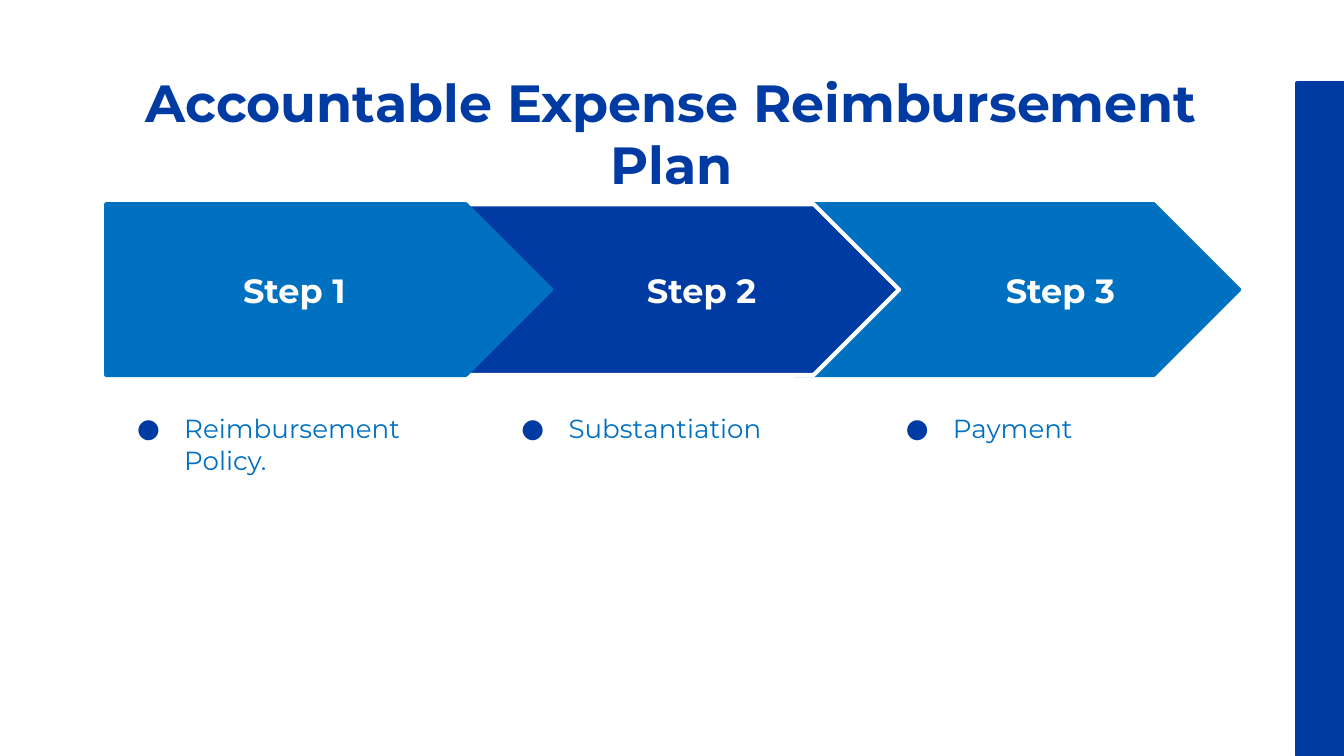
from dataclasses import dataclass
from lxml.etree import SubElement
from pptx import Presentation
from pptx.dml.color import RGBColor
from pptx.enum.shapes import MSO_SHAPE
from pptx.enum.text import MSO_ANCHOR, MSO_AUTO_SIZE, PP_ALIGN
from pptx.oxml.ns import qn
from pptx.util import Pt

NAVY, BLUE, WHITE = "003BA3", "0070C0", "FFFFFF"
LIST_LEFT, LIST_STEP = 55.44, 205.92


@dataclass
class Step:
    name: str
    note: str
    left: float   # arrow
    label: float  # left of its label
    fill: str
    line: str


STEPS = [
    Step("Step 1", "Reimbursement Policy.", 56.88, 89.28, BLUE, BLUE),
    Step("Step 2", "Substantiation", 243.36, 307.44, NAVY, WHITE),
    Step("Step 3", "Payment", 425.52, 499.68, BLUE, BLUE),
]


def color(code: str) -> RGBColor:
    return RGBColor.from_string(code)


def place(shape, x: float, y: float, w: float, h: float) -> None:
    shape.left, shape.top, shape.width, shape.height = Pt(x), Pt(y), Pt(w), Pt(h)


def block(slide, kind, box: tuple, fill: str, line: str, width: float) -> None:
    shape = slide.shapes.add_shape(kind, *map(Pt, box))
    shape.shadow.inherit = False
    shape.fill.solid()
    shape.fill.fore_color.rgb = color(fill)
    shape.line.color.rgb = color(line)
    shape.line.width = Pt(width)


def write(shape, text: str, size: float, code: str, bold: bool, align):
    frame = shape.text_frame
    frame.word_wrap = True
    frame.auto_size = MSO_AUTO_SIZE.NONE
    frame.vertical_anchor = MSO_ANCHOR.TOP
    frame.margin_left = frame.margin_right = Pt(7.2)
    frame.margin_top = frame.margin_bottom = Pt(7.2)
    para = frame.paragraphs[0]
    para.alignment = align
    para.line_spacing = 1.0
    para.space_before = Pt(0)
    run = para.add_run()
    run.text = text
    font = run.font
    font.name, font.size, font.bold = "Montserrat", Pt(size), bold
    font.color.rgb = color(code)
    return para


def bullet(para, code: str) -> None:
    props = para._p.get_or_add_pPr()
    props.set("marL", str(Pt(36)))
    props.set("indent", str(Pt(-25.2)))
    tint = SubElement(props, qn("a:buClr"))
    SubElement(tint, qn("a:srgbClr"), val=code)
    SubElement(props, qn("a:buFont"), typeface="Montserrat")
    SubElement(props, qn("a:buChar"), char="●")


def main() -> None:
    deck = Presentation()
    deck.slide_width, deck.slide_height = Pt(720), Pt(405)
    # The comparison layout has a title and four bodies
    slide = deck.slides.add_slide(deck.slide_layouts[4])

    # Title
    title = slide.shapes.title
    place(title, 56.16, 30.24, 606.96, 66.96)
    write(title, "Accountable Expense Reimbursement Plan", 28, NAVY, True, PP_ALIGN.CENTER)

    # Lists, one under each arrow
    bodies = [p for p in slide.placeholders if p.placeholder_format.idx in (1, 2, 3, 4)]
    for i, (body, step) in enumerate(zip(bodies, STEPS)):
        place(body, LIST_LEFT + i * LIST_STEP, 213.84, 191.52, 131.04)
        bullet(write(body, step.note, 14, BLUE, False, PP_ALIGN.LEFT), NAVY)

    # Drop the spare body and any footers
    used = [title.shape_id] + [b.shape_id for b in bodies[:len(STEPS)]]
    for spare in list(slide.placeholders):
        if spare.shape_id not in used:
            spare.element.getparent().remove(spare.element)

    # Arrows, the first one on top
    for step in reversed(STEPS):
        block(slide, MSO_SHAPE.PENTAGON, (step.left, 109.44, 238.32, 91.44),
              step.fill, step.line, 2.25)

    # Arrow labels
    for step in STEPS:
        label = slide.shapes.add_textbox(Pt(step.label), Pt(137.52), Pt(136.8), Pt(36))
        write(label, step.name, 18, WHITE, True, PP_ALIGN.CENTER)

    # Side bar
    block(slide, MSO_SHAPE.RECTANGLE, (694.8, 44.64, 25.2, 360), NAVY, NAVY, 2)
    deck.save("out.pptx")


if __name__ == "__main__":
    main()
